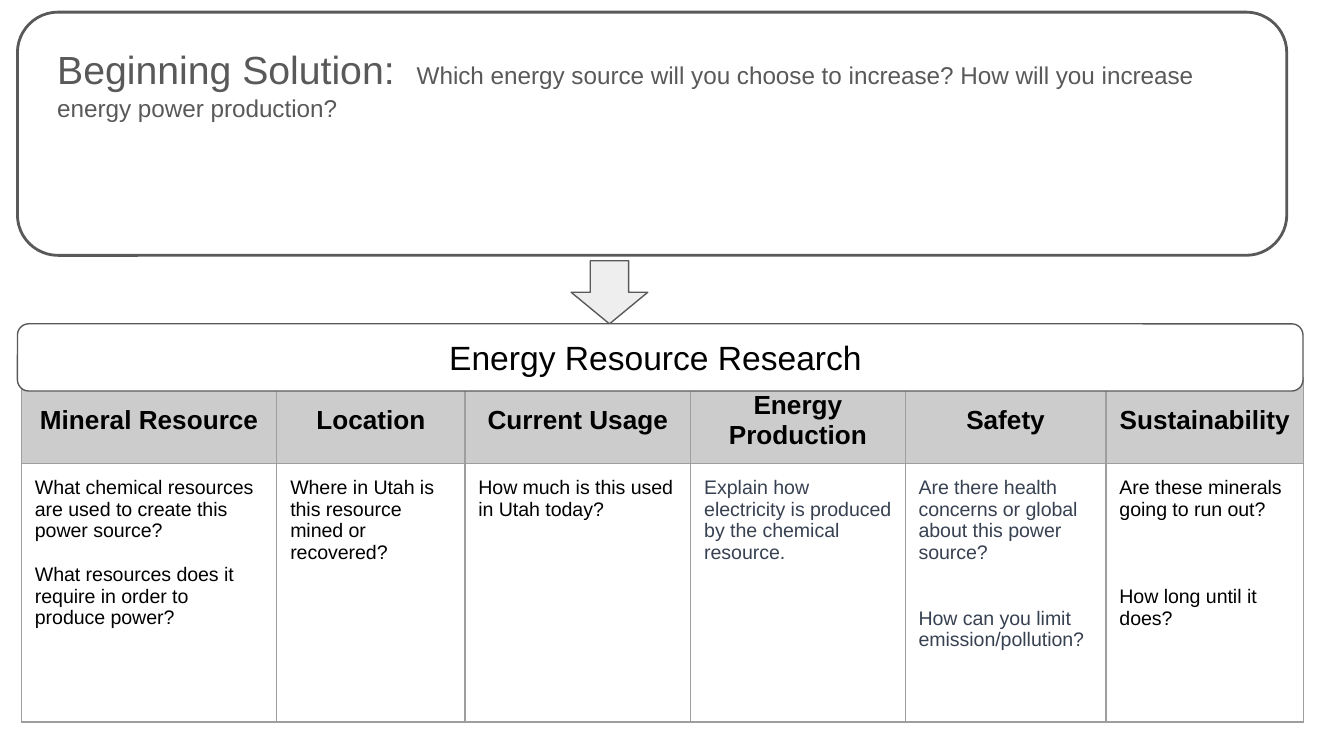
import pptx
import pptx.dml.color
import pptx.enum.shapes
import pptx.enum.text
import pptx.oxml
import pptx.oxml.ns
import pptx.util

PX = 4572  # 200 px to the inch
INSET = 20 * PX
GRAY, BLACK, SLATE = "595959", "000000", "374151"
LINE_PT = 11.7  # height of one line of body text
SHAPES = pptx.enum.shapes.MSO_SHAPE
ALIGN = pptx.enum.text.PP_ALIGN
ANCHOR = pptx.enum.text.MSO_ANCHOR


def rgb(value):
    return pptx.dml.color.RGBColor.from_string(value)


def write(paragraph, text, size=10.5, color=BLACK, bold=False, align=ALIGN.LEFT, gap=0):
    """Add a run to the paragraph; gap is the space before it, in points."""
    paragraph.alignment = align
    paragraph.space_before = pptx.util.Pt(gap)
    run = paragraph.add_run()
    run.text = text
    run.font.name = "Arial"
    run.font.size = pptx.util.Pt(size)
    run.font.bold = bold
    run.font.color.rgb = rgb(color)


prs = pptx.Presentation()
prs.slide_width, prs.slide_height = 2000 * PX, 1125 * PX
slide = prs.slides.add_slide(prs.slide_layouts[5])
shapes = slide.shapes
solution = shapes.title

# Solution frame, arrow and research banner
outlines = []
for preset, left, top, width, height, fill, weight in [
    (SHAPES.ROUNDED_RECTANGLE, 26, 18, 1889, 362, "FFFFFF", 1.5),
    (SHAPES.DOWN_ARROW, 850, 388, 114, 94, "EEEEEE", 0.75),
    (SHAPES.ROUNDED_RECTANGLE, 26, 482, 1913, 100, "FFFFFF", 0.75),
]:
    outline = shapes.add_shape(preset, left * PX, top * PX, width * PX, height * PX)
    outline.shadow.inherit = False
    outline.fill.solid()
    outline.fill.fore_color.rgb = rgb(fill)
    outline.line.color.rgb = rgb(GRAY)
    outline.line.width = pptx.util.Pt(weight)
    outlines.append(outline)
solution_frame, arrow, research_banner = outlines

# Solution prompt, in front of its frame
solution_frame._element.addnext(solution._element)
solution.left, solution.top = 65 * PX, 48 * PX
solution.width, solution.height = 1788 * PX, 316 * PX
prompt = solution.text_frame.paragraphs[0]
write(prompt, "Beginning Solution:  ", size=21, color=GRAY)
write(prompt, "Which energy source will you choose to increase? "
      "How will you increase energy power production?", size=13, color=GRAY)

write(research_banner.text_frame.paragraphs[0], "Energy Resource Research ",
      size=18, align=ALIGN.CENTER)

for box, anchor in [(solution, ANCHOR.TOP), (research_banner, ANCHOR.MIDDLE)]:
    frame = box.text_frame
    frame.word_wrap = True
    frame.auto_size = pptx.enum.text.MSO_AUTO_SIZE.NONE
    frame.vertical_anchor = anchor
    frame.margin_left = frame.margin_right = INSET
    frame.margin_top = frame.margin_bottom = INSET

# Research table: heading, width, text colour, lines between questions, questions
topics = [
    ("Mineral Resource", 380, BLACK, 1,
     ["What chemical resources are used to create this power source?",
      "What resources does it require in order to produce power?"]),
    ("Location", 280, BLACK, 0, ["Where in Utah is this resource mined or recovered?"]),
    ("Current Usage", 336, BLACK, 0, ["How much is this used in Utah today?"]),
    ("Energy Production", 319, SLATE, 0,
     ["Explain how electricity is produced by the chemical resource."]),
    ("Safety", 299, SLATE, 2,
     ["Are there health concerns or global about this power source?",
      "How can you limit emission/pollution?"]),
    ("Sustainability", 294, BLACK, 3,
     ["Are these minerals going to run out?", "How long until it does?"]),
]
row_heights = [127, 385]
table_holder = shapes.add_table(2, len(topics), 32 * PX, 562 * PX,
                                sum(topic[1] for topic in topics) * PX,
                                sum(row_heights) * PX)
research_banner._element.addprevious(table_holder._element)
research = table_holder.table
research.first_row = research.horz_banding = False
for row, height in zip(research.rows, row_heights):
    row.height = height * PX

for column, (heading, width, color, blank_lines, questions) in enumerate(topics):
    research.columns[column].width = width * PX
    heading_cell, question_cell = research.cell(0, column), research.cell(1, column)
    for cell in (heading_cell, question_cell):
        cell.margin_left = cell.margin_right = INSET
        cell.margin_top = cell.margin_bottom = INSET
        for side in ("lnL", "lnR", "lnT", "lnB"):
            cell._tc.get_or_add_tcPr().append(pptx.oxml.parse_xml(
                f'<a:{side} {pptx.oxml.ns.nsdecls("a")} w="9525"><a:solidFill>'
                f'<a:srgbClr val="9E9E9E"/></a:solidFill></a:{side}>'))

    heading_cell.fill.solid()
    heading_cell.fill.fore_color.rgb = rgb("CCCCCC")
    heading_cell.vertical_anchor = ANCHOR.MIDDLE
    write(heading_cell.text_frame.paragraphs[0], heading,
          size=14, bold=True, align=ALIGN.CENTER)

    question_cell.fill.background()
    question_text = question_cell.text_frame
    write(question_text.paragraphs[0], questions[0], color=color)
    for question in questions[1:]:
        write(question_text.add_paragraph(), question, color=color,
              gap=blank_lines * LINE_PT)

prs.save("out.pptx")
